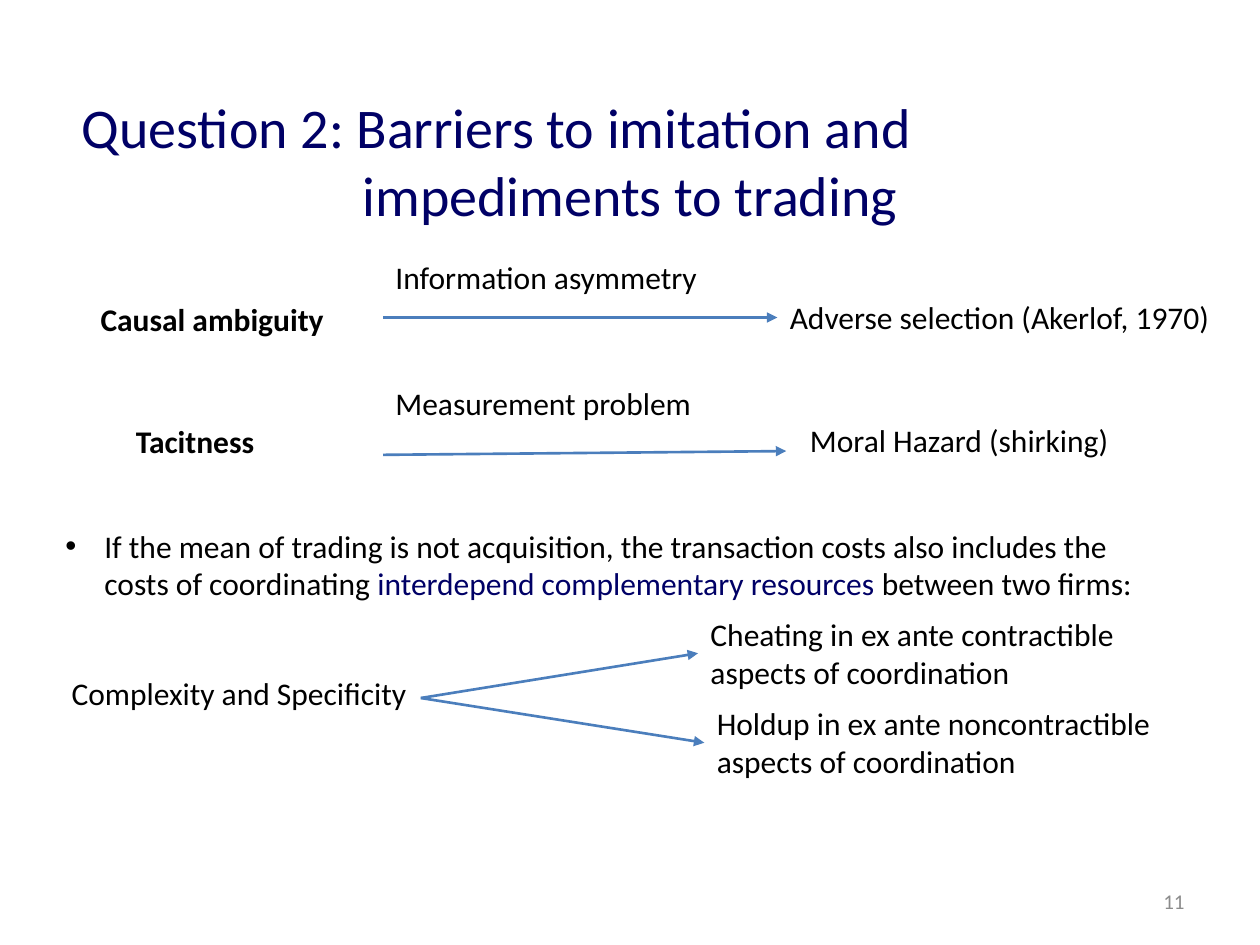
from lxml.etree import SubElement
from pptx import Presentation
from pptx.dml.color import RGBColor
from pptx.enum.shapes import MSO_CONNECTOR
from pptx.enum.text import MSO_ANCHOR, MSO_AUTO_SIZE, PP_ALIGN
from pptx.oxml.ns import qn
from pptx.util import Inches, Pt

HUES = {"navy": "000066", "black": "000000", "grey": "8C8C8C", "blue": "4B7EBC"}

TITLE = "Question 2: Barriers to imitation and\vimpediments to trading"
POINT = [
    ("If the mean of trading is not acquisition, the transaction costs also "
     "includes the costs of coordinating ", "black"),
    ("interdepend complementary resources ", "navy"),
    ("between two firms:", "black"),
]
# name: (text, left, top, width, height, bold)
LABELS = {
    "info": ("Information asymmetry", 3.04, 2, 5, 0.4, False),
    "hazard": ("Moral Hazard (shirking)", 6.33, 3.29, 2.91, 0.4, False),
    "cause": ("Causal ambiguity", 0.7, 2.33, 2.17, 0.4, True),
    "tacit": ("Tacitness", 0.98, 3.3, 1.5, 0.4, True),
    "adverse": ("Adverse selection (Akerlof, 1970)", 6.17, 2.32, 3.83, 0.4, False),
    "complex": ("Complexity and Specificity", 0.47, 5.3, 3, 0.4, False),
    "measure": ("Measurement problem", 3.04, 3, 5, 0.4, False),
    "cheat": ("Cheating in ex ante contractible aspects of coordination",
              5.54, 4.83, 3.99, 0.71, False),
    "holdup": ("Holdup in ex ante noncontractible aspects of coordination",
               5.59, 5.54, 3.71, 0.71, False),
}
# start, end, label joined at its left side
ARROWS = [
    ((3.04, 2.52), (6.17, 2.52), "adverse"),
    ((3.04, 3.61), (6.24, 3.58), None),
    ((3.34, 5.54), (5.54, 5.19), "cheat"),
    ((3.34, 5.54), (5.59, 5.9), "holdup"),
]


def add_text(slide, runs, box, size=18, bold=False, hang=None, bullet=None,
             align=PP_ALIGN.LEFT, anchor=MSO_ANCHOR.TOP, fit=MSO_AUTO_SIZE.NONE):
    """Add one paragraph of (text, hue) runs; hang is (margin, first indent)."""
    shape = slide.shapes.add_textbox(*map(Inches, box))
    frame = shape.text_frame
    form = {"word_wrap": True, "auto_size": fit, "vertical_anchor": anchor}
    for key, value in form.items():
        setattr(frame, key, value)
    para = frame.paragraphs[0]
    para.alignment = align
    if hang:
        props = para._p.get_or_add_pPr()
        for key, value in zip(("marL", "indent"), hang):
            props.set(key, str(Inches(value)))
        if bullet:
            SubElement(props, qn("a:buFont"), typeface="Arial")
            SubElement(props, qn("a:buChar"), char=bullet)
    for text, hue in runs:
        # A vertical tab marks a line break.
        for i, part in enumerate(text.split("\v")):
            if i:
                para.add_line_break()
            run = para.add_run()
            run.text = part
            for key, value in {"name": "Calibri", "size": Pt(size), "bold": bold}.items():
                setattr(run.font, key, value)
            run.font.color.rgb = RGBColor.from_string(HUES[hue])
    return shape


def add_arrow(slide, start, end, goal=None):
    line = slide.shapes.add_connector(
        MSO_CONNECTOR.STRAIGHT, *map(Inches, start + end))
    if goal is not None:
        line.end_connect(goal, 1)
    line.line.width = Pt(1.5)
    line.line.color.rgb = RGBColor.from_string(HUES["blue"])
    SubElement(line.line._get_or_add_ln(), qn("a:tailEnd"), type="triangle")
    SubElement(line._element.spPr, qn("a:effectLst"))


def main():
    deck = Presentation()
    deck.slide_width, deck.slide_height = Inches(10), Inches(7.5)
    slide = deck.slides.add_slide(deck.slide_layouts[6])
    grow = MSO_AUTO_SIZE.SHAPE_TO_FIT_TEXT

    add_text(slide, [(TITLE, "navy")], (0, 0.76, 10, 1.02), size=32,
             hang=(2.78, -2.23), anchor=MSO_ANCHOR.MIDDLE)
    add_text(slide, [("11", "grey")], (7.17, 6.95, 2.33, 0.4), size=12,
             align=PP_ALIGN.RIGHT, anchor=MSO_ANCHOR.MIDDLE)
    add_text(slide, POINT, (0.42, 4.13, 8.82, 0.71), hang=(0.31, -0.31),
             bullet="•", fit=grow)

    boxes = {}
    for name, (text, *box, bold) in LABELS.items():
        boxes[name] = add_text(slide, [(text, "black")], box, bold=bold, fit=grow)
    for start, end, goal in ARROWS:
        add_arrow(slide, start, end, boxes.get(goal))

    deck.save("out.pptx")


if __name__ == "__main__":
    main()
